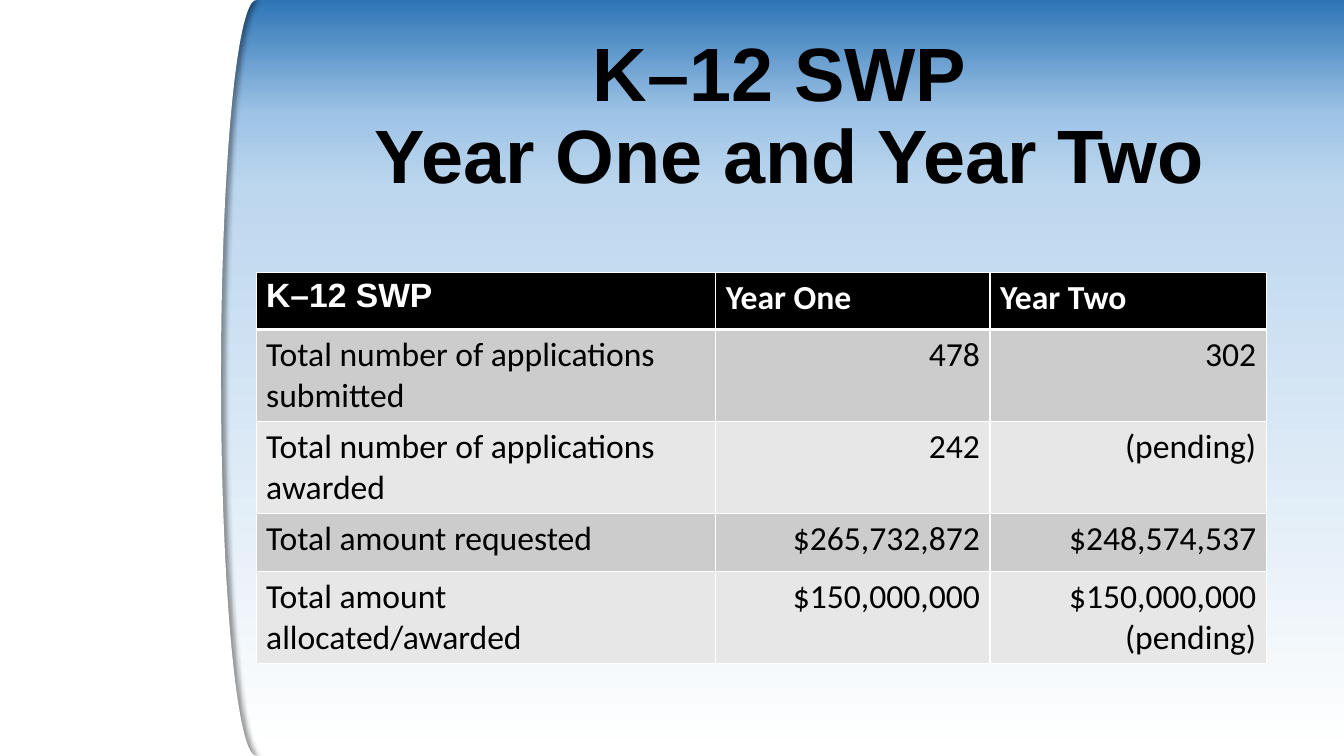
from dataclasses import dataclass

from lxml.etree import SubElement
from pptx import Presentation
from pptx.dml.color import RGBColor
from pptx.enum.shapes import MSO_SHAPE
from pptx.enum.text import MSO_ANCHOR, MSO_AUTO_SIZE, PP_ALIGN
from pptx.oxml.ns import qn
from pptx.oxml.xmlchemy import BaseOxmlElement
from pptx.shapes.autoshape import Shape
from pptx.slide import Slide
from pptx.table import _Cell
from pptx.text.text import _Paragraph
from pptx.util import Inches, Pt


@dataclass(frozen=True)
class Theme:
    black: str = "000000"
    white: str = "FFFFFF"
    bands: tuple[str, str] = ("CCCCCC", "E7E7E7")
    sky: tuple[tuple[int, str], ...] = (
        (0, "2E75B6"), (15, "9DC3E6"), (25, "BDD7EE"), (100, "FFFFFF"))
    heading_font: str = "Arial"
    body_font: str = "Calibri"
    title_size: int = 54
    table_size: int = 24


@dataclass(frozen=True)
class Panel:
    kind: MSO_SHAPE
    left: float
    width: float
    shadow: bool = False


@dataclass(frozen=True)
class Row:
    label: str
    year_one: str
    year_two: str


THEME = Theme()
SLIDE_HEIGHT = 7.5
PANELS = (
    Panel(MSO_SHAPE.FLOWCHART_STORED_DATA, 0.45, 2.09, shadow=True),
    Panel(MSO_SHAPE.RECTANGLE, 0, 1.16),
)
TITLE_LINES = ("K–12 SWP ", "Year One and Year Two")
COLUMN_WIDTHS = (4.56, 2.72, 2.74)
ROW_HEIGHT = 0.57
ROWS = (
    Row("K–12 SWP", "Year One", "Year Two"),
    Row("Total number of applications submitted", "478", "302"),
    Row("Total number of applications awarded", "242", "(pending)"),
    Row("Total amount requested", "$265,732,872", "$248,574,537"),
    Row("Total amount allocated/awarded", "$150,000,000", "$150,000,000 (pending)"),
)


def add_color(parent: BaseOxmlElement, color: str) -> BaseOxmlElement:
    return SubElement(parent, qn("a:srgbClr"), val=color)


def add_run(p: _Paragraph, text: str, size: int, font: str, color: str, bold: bool) -> None:
    r = p.add_run()
    r.text = text
    r.font.size = Pt(size)
    r.font.name = font
    r.font.bold = bold
    r.font.color.rgb = RGBColor.from_string(color)


def paint_background(s: Slide) -> None:
    fill = s.background.fill
    fill.gradient()
    fill.gradient_angle = 270
    stops = s.element.find(".//" + qn("a:gsLst"))
    for stop in list(stops):
        stops.remove(stop)
    for percent, color in THEME.sky:
        add_color(SubElement(stops, qn("a:gs"), pos=str(percent * 1000)), color)


def add_panel(s: Slide, panel: Panel) -> Shape:
    sp = s.shapes.add_shape(panel.kind, Inches(panel.left), 0,
                            Inches(panel.width), Inches(SLIDE_HEIGHT))
    sp.shadow.inherit = False
    sp.fill.solid()
    sp.fill.fore_color.rgb = RGBColor.from_string(THEME.white)
    sp.line.fill.background()
    if panel.shadow:
        effects = sp.element.spPr.find(qn("a:effectLst"))
        shadow = SubElement(effects, qn("a:outerShdw"), blurRad=str(Pt(4)),
                            dist=str(Pt(3)), dir="0", algn="l", rotWithShape="0")
        SubElement(add_color(shadow, THEME.black), qn("a:alpha"), val="40000")
    return sp


def format_title(title: Shape) -> None:
    title.left, title.top = Inches(2.54), Inches(0.4)
    title.width, title.height = Inches(10.58), Inches(1.54)
    tf = title.text_frame
    tf.word_wrap = True
    tf.auto_size = MSO_AUTO_SIZE.NONE
    tf.vertical_anchor = MSO_ANCHOR.MIDDLE
    p = tf.paragraphs[0]
    p.alignment = PP_ALIGN.CENTER
    p.line_spacing = 0.9
    for i, line in enumerate(TITLE_LINES):
        if i:
            p.add_line_break()
        add_run(p, line, THEME.title_size, THEME.heading_font, THEME.black, True)


def set_borders(cell: _Cell, top: int, bottom: int) -> None:
    props = cell._tc.get_or_add_tcPr()
    widths = {"a:lnL": 1, "a:lnR": 1, "a:lnT": top, "a:lnB": bottom}
    for i, (tag, width) in enumerate(widths.items()):
        line = SubElement(props, qn(tag), w=str(Pt(width)))
        add_color(SubElement(line, qn("a:solidFill")), THEME.white)
        props.insert(i, line)


def fill_cell(cell: _Cell, text: str, row: int, col: int) -> None:
    header = row == 0
    cell.fill.solid()
    color = THEME.black if header else THEME.bands[(row - 1) % 2]
    cell.fill.fore_color.rgb = RGBColor.from_string(color)
    set_borders(cell, top=3 if row == 1 else 1, bottom=3 if header else 1)
    p = cell.text_frame.paragraphs[0]
    p.alignment = PP_ALIGN.RIGHT if col and not header else PP_ALIGN.LEFT
    font = THEME.heading_font if header and col == 0 else THEME.body_font
    add_run(p, text, THEME.table_size, font, THEME.white if header else THEME.black, header)


def add_results_table(s: Slide) -> None:
    table = s.shapes.add_table(
        len(ROWS), len(COLUMN_WIDTHS), Inches(2.54), Inches(2.7),
        Inches(sum(COLUMN_WIDTHS)), Inches(ROW_HEIGHT * len(ROWS))).table
    table.horz_banding = False
    for column, width in zip(table.columns, COLUMN_WIDTHS):
        column.width = Inches(width)
    for i, row in enumerate(ROWS):
        table.rows[i].height = Inches(ROW_HEIGHT)
        for j, text in enumerate((row.label, row.year_one, row.year_two)):
            fill_cell(table.cell(i, j), text, i, j)


def main() -> None:
    prs = Presentation()
    prs.slide_width, prs.slide_height = Inches(13.33), Inches(SLIDE_HEIGHT)
    s = prs.slides.add_slide(prs.slide_layouts[5])
    paint_background(s)
    panels = [add_panel(s, panel) for panel in PANELS]
    title = s.shapes.title
    panels[-1].element.addnext(title.element)
    format_title(title)
    add_results_table(s)
    prs.save("out.pptx")


if __name__ == "__main__":
    main()
